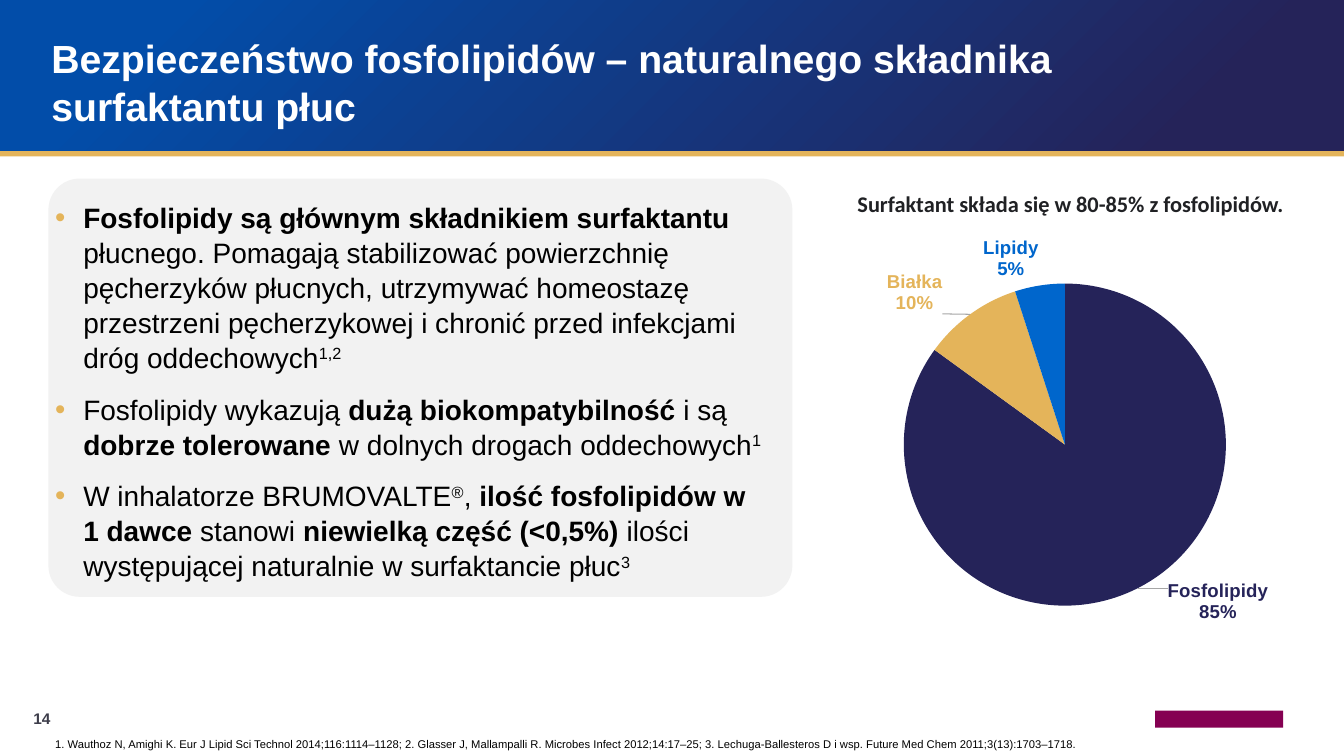
from dataclasses import dataclass

from lxml.etree import SubElement
from pptx import Presentation
from pptx.chart.data import CategoryChartData
from pptx.dml.color import RGBColor
from pptx.enum.chart import XL_CHART_TYPE, XL_LABEL_POSITION
from pptx.enum.shapes import MSO_SHAPE
from pptx.enum.text import MSO_ANCHOR, MSO_AUTO_SIZE, PP_ALIGN
from pptx.oxml import parse_xml
from pptx.oxml.ns import nsdecls, qn
from pptx.util import Cm, Pt


@dataclass(frozen=True)
class Theme:
    font: str = "Arial"
    heading_font: str = "Calibri"
    navy: str = "252359"
    royal: str = "024DA9"
    blue: str = "0066CC"
    gold: str = "E4B45A"
    plum: str = "850052"
    panel: str = "F2F2F2"
    white: str = "FFFFFF"
    black: str = "000000"
    number: str = "3D3D4A"
    heading: str = "202124"
    leader: str = "A6A6A6"
    title_size: float = 28
    body_size: float = 20
    heading_size: float = 16
    label_size: float = 13.3
    number_size: float = 11
    note_size: float = 8
    line_spacing: float = 1.04


@dataclass(frozen=True)
class Box:
    left: float
    top: float
    width: float
    height: float

    def lengths(self) -> tuple:
        return Cm(self.left), Cm(self.top), Cm(self.width), Cm(self.height)


@dataclass(frozen=True)
class Span:
    text: str
    bold: bool = False
    raised: bool = False
    new_line: bool = False


@dataclass(frozen=True)
class Slice:
    name: str
    value: int
    color: str
    shift: tuple[float, float] | None = None


THEME = Theme()
SLIDE_WIDTH, SLIDE_HEIGHT = 33.87, 19.05
HANGING = Cm(0.71)

FINDINGS = [
    [
        Span("Fosfolipidy są głównym składnikiem surfaktantu ", bold=True),
        Span("płucnego. Pomagają stabilizować powierzchnię pęcherzyków płucnych, "
             "utrzymywać homeostazę przestrzeni pęcherzykowej i chronić przed "
             "infekcjami dróg oddechowych"),
        Span("1,2", raised=True),
    ],
    [
        Span("Fosfolipidy wykazują "),
        Span("dużą biokompatybilność ", bold=True),
        Span("i są "),
        Span("dobrze tolerowane ", bold=True),
        Span("w dolnych drogach oddechowych"),
        Span("1", raised=True),
    ],
    [
        Span("W inhalatorze BRUMOVALTE"),
        Span("®", raised=True),
        Span(", "),
        Span("ilość fosfolipidów w", bold=True),
        Span("1 dawce", bold=True, new_line=True),
        Span(" stanowi "),
        Span("niewielką część (<0,5%) ", bold=True),
        Span("ilości występującej naturalnie w surfaktancie płuc"),
        Span("3", raised=True),
    ],
]
REFERENCES = (
    "1. Wauthoz N, Amighi K. Eur J Lipid Sci Technol 2014;116:1114–1128; "
    "2. Glasser J, Mallampalli R. Microbes Infect 2012;14:17–25; "
    "3. Lechuga-Ballesteros D i wsp. Future Med Chem 2011;3(13):1703–1718."
)
SURFACTANT = [
    Slice("Fosfolipidy", 85, THEME.navy, (0.05, -0.03)),
    Slice("Białka", 10, THEME.gold, (-0.045, 0.01)),
    Slice("Lipidy", 5, THEME.blue),
]


def style_font(font, size: float, color: str, bold=False, name=THEME.font) -> None:
    font.name, font.size, font.bold = name, Pt(size), bold
    font.color.rgb = RGBColor.from_string(color)


def add_panel(slide, box: Box, color: str, kind=MSO_SHAPE.RECTANGLE):
    panel = slide.shapes.add_shape(kind, *box.lengths())
    panel.shadow.inherit = False
    panel.fill.solid()
    panel.fill.fore_color.rgb = RGBColor.from_string(color)
    panel.line.fill.background()
    return panel


def add_span(paragraph, span: Span, size: float, color: str, name=THEME.font) -> None:
    if span.new_line:
        paragraph.add_line_break()
    run = paragraph.add_run()
    run.text = span.text
    style_font(run.font, size, color, span.bold, name)
    if span.raised:
        run._r.get_or_add_rPr().set("baseline", "30000")


def add_text(slide, box: Box, anchor=MSO_ANCHOR.TOP):
    frame = slide.shapes.add_textbox(*box.lengths()).text_frame
    frame.word_wrap = True
    frame.vertical_anchor = anchor
    return frame


def hang(paragraph, bullet: bool) -> None:
    properties = paragraph._p.get_or_add_pPr()
    properties.set("marL", str(HANGING))
    properties.set("indent", str(-HANGING))
    if bullet:
        color = SubElement(properties, qn("a:buClr"))
        SubElement(color, qn("a:srgbClr"), val=THEME.gold)
        SubElement(properties, qn("a:buSzPct"), val="105000")
        SubElement(properties, qn("a:buFont"), typeface=THEME.font)
        SubElement(properties, qn("a:buChar"), char="•")


def show_name_and_percent(labels) -> None:
    """Show category and percentage on separate lines."""
    for tag, shown in (("showVal", "0"), ("showCatName", "1"), ("showPercent", "1")):
        labels.find(qn(f"c:{tag}")).set("val", shown)
    separator = parse_xml(f"<c:separator {nsdecls('c')}>\n</c:separator>")
    labels.find(qn("c:showBubbleSize")).addnext(separator)


def add_pie(slide, box: Box, slices: list[Slice]) -> None:
    data = CategoryChartData()
    data.categories = [part.name for part in slices]
    data.add_series("Series 1", [part.value for part in slices])
    chart = slide.shapes.add_chart(XL_CHART_TYPE.PIE, *box.lengths(), data).chart
    chart.has_legend = chart.has_title = False
    style_font(chart.font, THEME.label_size, THEME.black)
    plot = chart.plots[0]
    plot.vary_by_categories = True

    # Plot area
    area = chart._chartSpace.chart.plotArea
    for old in area.findall(qn("c:layout")):
        area.remove(old)
    area.insert(0, parse_xml(
        f'<c:layout {nsdecls("c")}><c:manualLayout><c:layoutTarget val="inner"/>'
        '<c:xMode val="edge"/><c:yMode val="edge"/><c:x val="0.17"/><c:y val="0.14"/>'
        '<c:w val="0.6"/><c:h val="0.74"/></c:manualLayout></c:layout>'))

    # Slices and their labels
    series = plot.series[0]
    for index, part in enumerate(slices):
        point = series.points[index]
        point.format.fill.solid()
        point.format.fill.fore_color.rgb = RGBColor.from_string(part.color)
        point.format.line.fill.background()
        label = point.data_label
        style_font(label.font, THEME.label_size, part.color, bold=True)
        label.position = XL_LABEL_POSITION.OUTSIDE_END
        element = series._element.find(qn("c:dLbls")).findall(qn("c:dLbl"))[index]
        show_name_and_percent(element)
        if part.shift:
            x, y = part.shift
            element.find(qn("c:idx")).addnext(parse_xml(
                f'<c:layout {nsdecls("c")}><c:manualLayout><c:x val="{x}"/>'
                f'<c:y val="{y}"/></c:manualLayout></c:layout>'))

    # Leader lines
    series.data_labels.number_format = "0%"
    series.data_labels.number_format_is_linked = False
    labels = series._element.find(qn("c:dLbls"))
    show_name_and_percent(labels)
    for old in labels.findall(qn("c:showLeaderLines")):
        labels.remove(old)
    SubElement(labels, qn("c:showLeaderLines"), val="1")
    labels.append(parse_xml(
        f'<c:leaderLines {nsdecls("c", "a")}><c:spPr><a:ln w="9525"><a:solidFill>'
        f'<a:srgbClr val="{THEME.leader}"/></a:solidFill></a:ln></c:spPr></c:leaderLines>'))


def main() -> None:
    deck = Presentation()
    deck.slide_width, deck.slide_height = Cm(SLIDE_WIDTH), Cm(SLIDE_HEIGHT)
    slide = deck.slides.add_slide(deck.slide_layouts[5])

    # Header band
    header = add_panel(slide, Box(0, 0, SLIDE_WIDTH, 3.89), THEME.navy)
    header.fill.gradient()
    header.fill.gradient_angle = 315
    stops = ((0.12, THEME.royal), (0.88, THEME.navy))
    for stop, (position, color) in zip(header.fill.gradient_stops, stops):
        stop.position = position
        stop.color.rgb = RGBColor.from_string(color)
    add_panel(slide, Box(0, 3.81, SLIDE_WIDTH, 0.13), THEME.gold)

    # Title, moved in front of the band
    title = slide.shapes.title
    title.left, title.top, title.width, title.height = Box(1.04, 0.61, 31.22, 2.79).lengths()
    slide.shapes._spTree.append(title._element)
    title.text_frame.auto_size = MSO_AUTO_SIZE.NONE
    title.text_frame.vertical_anchor = MSO_ANCHOR.BOTTOM
    heading = title.text_frame.paragraphs[0]
    heading.alignment = PP_ALIGN.LEFT
    heading.line_spacing = THEME.line_spacing
    add_span(heading, Span("Bezpieczeństwo fosfolipidów – naturalnego składnika surfaktantu płuc",
                           bold=True), THEME.title_size, THEME.white)

    # Findings
    panel = add_panel(slide, Box(1.22, 4.5, 18.75, 10.54), THEME.panel,
                      MSO_SHAPE.ROUNDED_RECTANGLE)
    panel.adjustments[0] = 0.075
    findings = add_text(slide, Box(1.14, 4.9, 19.2, 10.54))
    for index, spans in enumerate(FINDINGS):
        finding = findings.add_paragraph() if index else findings.paragraphs[0]
        hang(finding, bullet=True)
        finding.line_spacing = THEME.line_spacing
        finding.space_before = Pt(6 if index else 0)
        finding.space_after = Pt(6)
        for span in spans:
            add_span(finding, span, THEME.body_size, THEME.black)

    # Surfactant composition
    caption = add_text(slide, Box(21.36, 4.67, 11.68, 0.94)).paragraphs[0]
    add_span(caption, Span("Surfaktant składa się w 80-85% z fosfolipidów.", bold=True),
             THEME.heading_size, THEME.heading, THEME.heading_font)
    add_pie(slide, Box(20.45, 5.61, 13.59, 10.97), SURFACTANT)

    # Footer
    references = add_text(slide, Box(1.14, 17.22, 27.03, 1.83), MSO_ANCHOR.BOTTOM).paragraphs[0]
    hang(references, bullet=False)
    references.space_after = Pt(3)
    add_span(references, Span(REFERENCES), THEME.note_size, THEME.black)
    page = add_text(slide, Box(0.84, 17.65, 1.3, 0.69), MSO_ANCHOR.BOTTOM)
    page.margin_left = page.margin_top = page.margin_right = page.margin_bottom = 0
    add_span(page.paragraphs[0], Span("14", bold=True), THEME.number_size, THEME.number)
    add_panel(slide, Box(29.11, 17.91, 3.23, 0.43), THEME.plum)

    deck.save("out.pptx")


if __name__ == "__main__":
    main()
